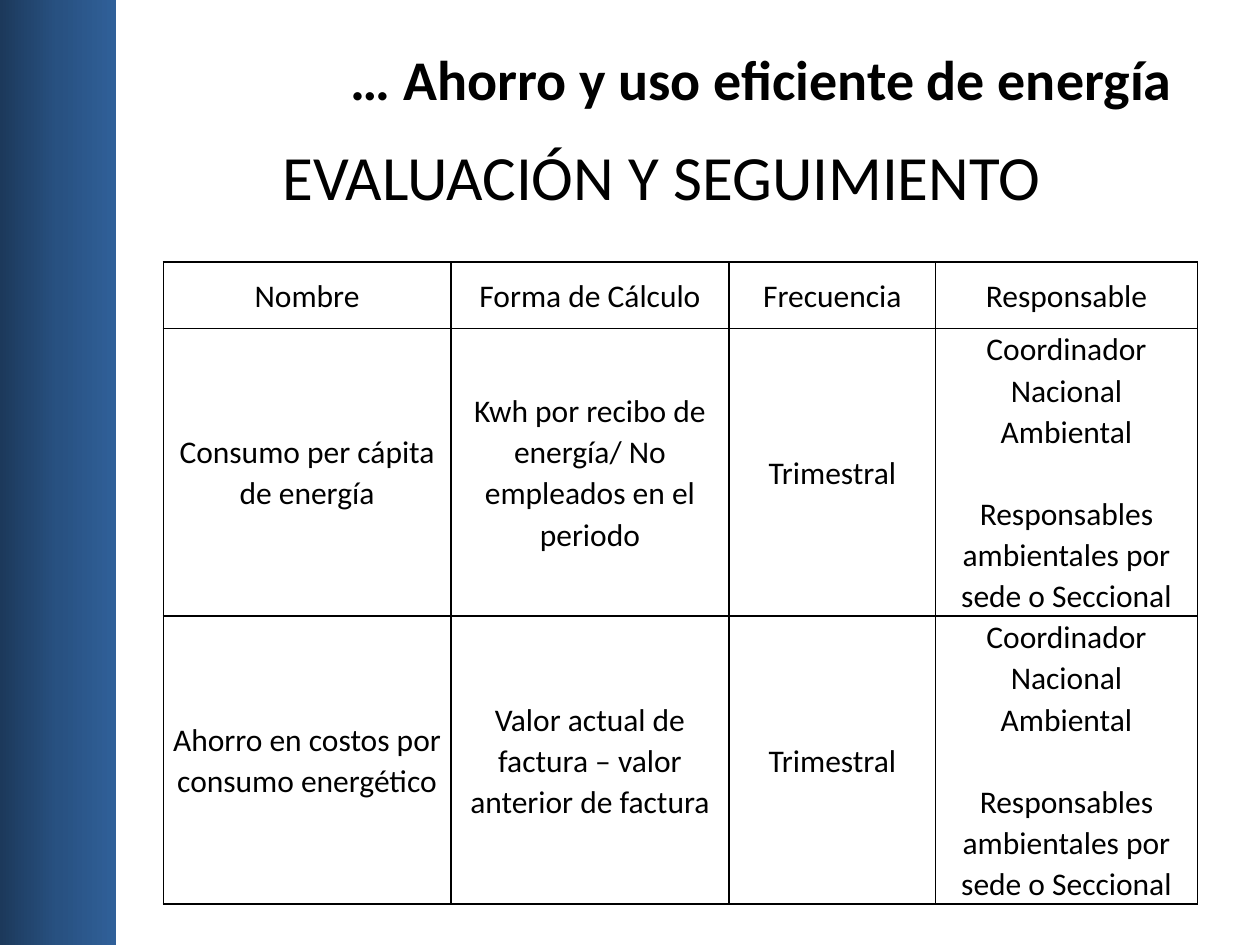
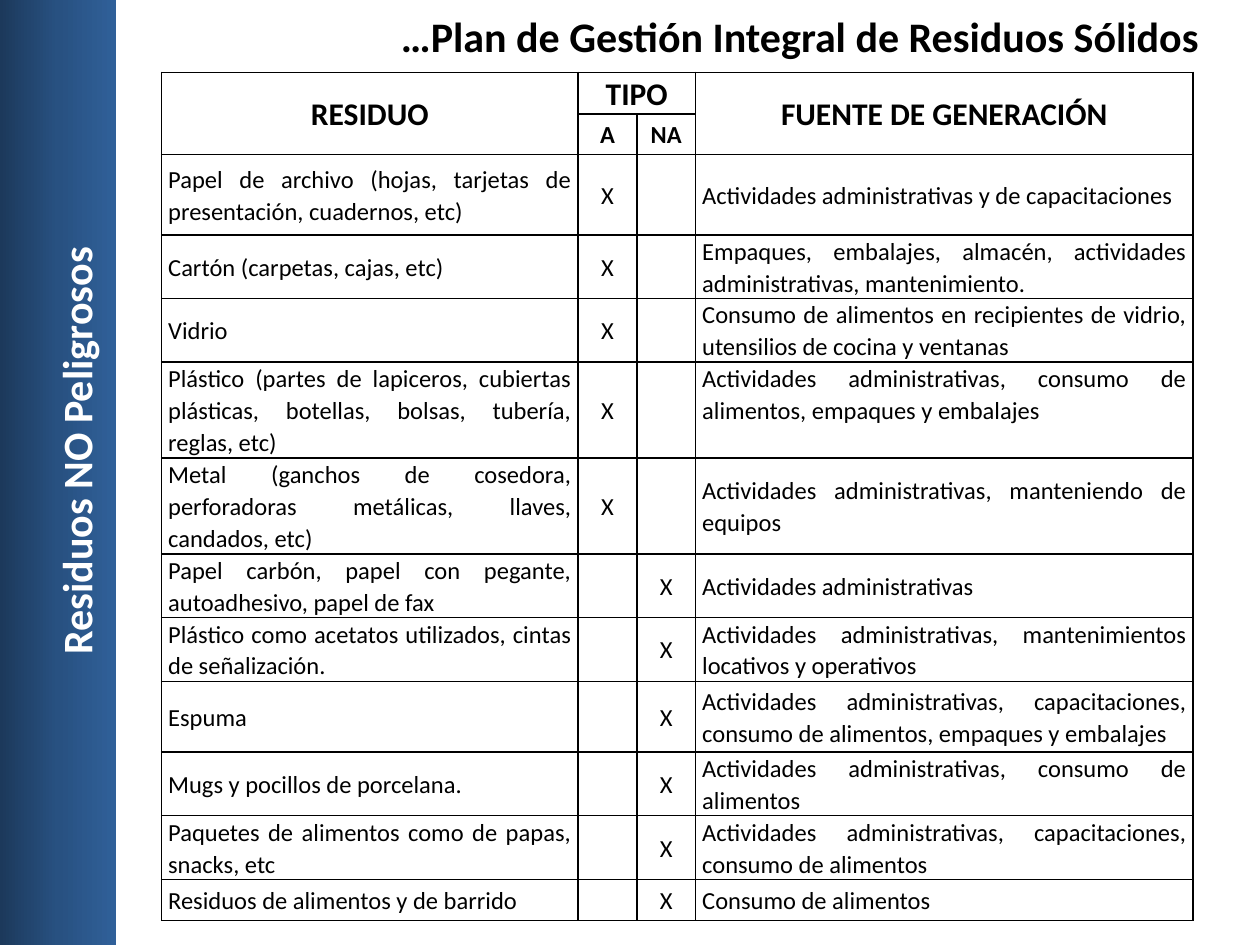
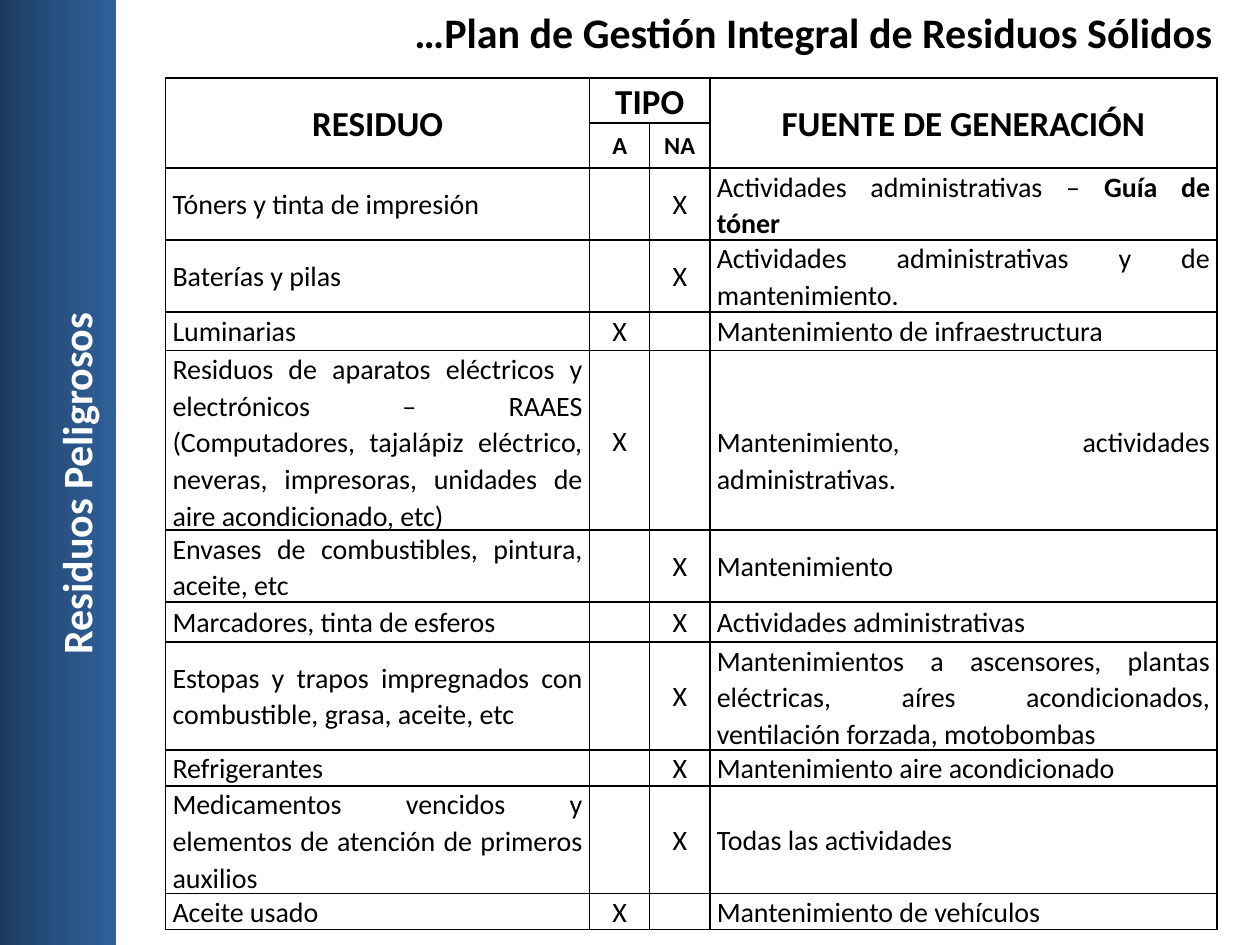
"""Build three slides on energy saving and solid waste management."""
import copy
from typing import NamedTuple, Optional

import lxml.etree
import pptx
import pptx.dml.color
import pptx.enum.shapes
import pptx.enum.text
import pptx.oxml.ns
import pptx.presentation
import pptx.shapes.autoshape
import pptx.slide
import pptx.table
import pptx.text.text
import pptx.util

Pt = pptx.util.Pt
RGBColor = pptx.dml.color.RGBColor
Align = pptx.enum.text.PP_ALIGN
Anchor = pptx.enum.text.MSO_ANCHOR
qn = pptx.oxml.ns.qn

FONT = "Calibri"
BLACK = RGBColor(0x00, 0x00, 0x00)
WHITE = RGBColor(0xFF, 0xFF, 0xFF)
BAND = (
    (0, RGBColor(0x1C, 0x39, 0x5B)),
    (0.5, RGBColor(0x28, 0x51, 0x81)),
    (1, RGBColor(0x30, 0x60, 0x99)),
)
WIDE, HIGH = 720, 540
LEAD = 1.07
PLAN = "…Plan de Gestión Integral de Residuos Sólidos"


class Box(NamedTuple):
    """Place of an element, in points."""

    left: float
    top: float
    width: float
    height: float


class Style(NamedTuple):
    """Look of a run of text."""

    size: float
    bold: bool = False
    color: RGBColor = BLACK


class Waste(NamedTuple):
    """One kind of waste, whether it is usable, and its source."""

    name: str
    usable: bool
    source: str
    height: float
    strong: str = ""
    gap: Optional[float] = None


class Plan(NamedTuple):
    """A slide that lists wastes."""

    title: Box
    side: str
    left: float
    top: float
    cols: tuple[float, ...]
    heads: tuple[float, float]
    pad: float
    head: Style
    body: Style
    wastes: tuple[Waste, ...]


def add_run(para: pptx.text.text._Paragraph, text: str, style: Style) -> None:
    """Add one run in the given style."""
    run = para.add_run()
    run.text = text
    run.font.name = FONT
    run.font.size = Pt(style.size)
    run.font.bold = style.bold
    run.font.color.rgb = style.color


def add_text(
    slide: pptx.slide.Slide, box: Box, text: str, style: Style, align: Align
) -> pptx.shapes.autoshape.Shape:
    """Add a text box that wraps and holds one line."""
    shape = slide.shapes.add_textbox(*map(Pt, box))
    frame = shape.text_frame
    frame.word_wrap = True
    frame.vertical_anchor = Anchor.TOP
    para = frame.paragraphs[0]
    para.alignment = align
    add_run(para, text, style)
    return shape


def add_title(slide: pptx.slide.Slide, box: Box, text: str, size: float) -> None:
    """Add the bold title at the right."""
    shape = add_text(slide, box, text, Style(size, True), Align.RIGHT)
    shape.text_frame.margin_top = Pt(3.6)


def add_side(slide: pptx.slide.Slide, text: str) -> None:
    """Write a label up the side band."""
    box = Box(-136, 255.6, 357, 38)
    shape = add_text(slide, box, text, Style(24, True, WHITE), Align.LEFT)
    shape.rotation = 270
    shape.text_frame.margin_left = Pt(79.2)
    shape.text_frame.paragraphs[0].line_spacing = 1.06


def new_slide(deck: pptx.presentation.Presentation) -> pptx.slide.Slide:
    """Add a blank slide with the shaded band at the left."""
    slide = deck.slides.add_slide(deck.slide_layouts[6])
    kind = pptx.enum.shapes.MSO_SHAPE.RECTANGLE
    band = slide.shapes.add_shape(kind, Pt(0), Pt(0), Pt(66.5), Pt(HIGH))
    band.shadow.inherit = False
    band.line.fill.background()
    band.fill.gradient()
    band.fill.gradient_angle = 0
    stops = next(band._element.iter(qn("a:gsLst")))
    stops.insert(1, copy.deepcopy(stops[0]))
    for stop, (place, color) in zip(band.fill.gradient_stops, BAND):
        stop.position = place
        stop.color.rgb = color
    return slide


def add_edge(cell: pptx.table._Cell) -> None:
    """Draw a thin black line on each side of a cell."""
    props = cell._tc.get_or_add_tcPr()
    for side in ("lnL", "lnR", "lnT", "lnB"):
        line = lxml.etree.SubElement(props, qn(f"a:{side}"), w=str(Pt(1)))
        fill = lxml.etree.SubElement(line, qn("a:solidFill"))
        lxml.etree.SubElement(fill, qn("a:srgbClr"), val=str(BLACK))


def add_grid(
    slide: pptx.slide.Slide,
    left: float,
    top: float,
    cols: tuple[float, ...],
    rows: list[float],
    pad: float,
) -> pptx.table.Table:
    """Add a lined table with empty cells."""
    box = Box(left, top, sum(cols), sum(rows))
    grid = slide.shapes.add_table(len(rows), len(cols), *map(Pt, box)).table
    grid.first_row = grid.horz_banding = False
    for col, width in zip(grid.columns, cols):
        col.width = Pt(width)
    for row, height in zip(grid.rows, rows):
        row.height = Pt(height)
        for cell in row.cells:
            cell.margin_left = cell.margin_right = Pt(pad)
            cell.margin_top = cell.margin_bottom = Pt(0)
            cell.vertical_anchor = Anchor.MIDDLE
            add_edge(cell)
            cell.fill.background()
            para = cell.text_frame.paragraphs[0]._p
            lxml.etree.SubElement(para, qn("a:endParaRPr"), sz="1200")
    return grid


def fill_cell(
    cell: pptx.table._Cell, text: str, style: Style, align: Align = Align.CENTER
) -> pptx.text.text._Paragraph:
    """Write the first paragraph of a cell."""
    para = cell.text_frame.paragraphs[0]
    para.alignment = align
    para.line_spacing = LEAD
    add_run(para, text, style)
    return para


def draw_check(deck: pptx.presentation.Presentation) -> None:
    """Draw the slide on how energy use is checked."""
    slide = new_slide(deck)
    add_text(
        slide, Box(54, 75, 648, 55.5), "EVALUACIÓN Y SEGUIMIENTO", Style(36), Align.CENTER
    )
    add_title(slide, Box(36, 21.6, 641, 90), "… Ahorro y uso eficiente de energía", 32)
    roles = ("Coordinador Nacional Ambiental", "Responsables ambientales por sede o Seccional")
    rows = (
        ("Nombre", "Forma de Cálculo", "Frecuencia", "Responsable"),
        (
            "Consumo per cápita de energía",
            "Kwh por recibo de energía/ No empleados en el periodo",
            "Trimestral",
            roles[0],
        ),
        (
            "Ahorro en costos por consumo energético",
            "Valor actual de factura – valor anterior de factura",
            "Trimestral",
            roles[0],
        ),
    )
    grid = add_grid(
        slide, 93.4, 149.8, (164.2, 159.1, 118, 149.6), [37.8, 164.5, 164.5], 5
    )
    style = Style(18)
    for row, texts in enumerate(rows):
        for col, text in enumerate(texts):
            fill_cell(grid.cell(row, col), text, style)
    for row in (1, 2):
        para = grid.cell(row, 3).text_frame.add_paragraph()
        para.alignment = Align.CENTER
        para.line_spacing = LEAD
        para.space_before = Pt(23.5)
        add_run(para, roles[1], style)


def draw_plan(deck: pptx.presentation.Presentation, plan: Plan) -> None:
    """Draw a slide that lists wastes, their type and source."""
    slide = new_slide(deck)
    add_title(slide, plan.title, PLAN, 24)
    add_side(slide, plan.side)
    rows = [*plan.heads, *(waste.height for waste in plan.wastes)]
    grid = add_grid(slide, plan.left, plan.top, plan.cols, rows, plan.pad)
    for col in (0, 3):
        grid.cell(0, col).merge(grid.cell(1, col))
    grid.cell(0, 1).merge(grid.cell(0, 2))
    for col, text in ((0, "RESIDUO"), (1, "TIPO"), (3, "FUENTE DE GENERACIÓN")):
        fill_cell(grid.cell(0, col), text, plan.head)
    for col, text in ((1, "A"), (2, "NA")):
        fill_cell(grid.cell(1, col), text, Style(14, True))
    for row, waste in enumerate(plan.wastes, 2):
        fill_cell(grid.cell(row, 0), waste.name, plan.body, Align.JUSTIFY)
        fill_cell(grid.cell(row, 1 if waste.usable else 2), "X", plan.body)
        cell = grid.cell(row, 3)
        para = fill_cell(cell, waste.source, plan.body, Align.JUSTIFY)
        if waste.strong:
            add_run(para, waste.strong, plan.body._replace(bold=True))
        if waste.gap is not None:
            cell.vertical_anchor = Anchor.TOP
            cell.margin_top = Pt(waste.gap)


ADMIN = "Actividades administrativas"
SAFE = Plan(
    Box(77, 2.2, 615.3, 44.6), "Residuos NO Peligrosos", 92.3, 41.4,
    (238, 33.7, 33.5, 284.4), (23.7, 23.3), 3.8, Style(18, True), Style(14),
    (
        Waste("Papel de archivo (hojas, tarjetas de presentación, cuadernos, etc)", True,
              f"{ADMIN} y de capacitaciones", 45.8),
        Waste("Cartón (carpetas, cajas, etc)", True,
              "Empaques, embalajes, almacén, actividades administrativas, mantenimiento.", 36.4),
        Waste("Vidrio", True,
              "Consumo de alimentos en recipientes de vidrio, utensilios de cocina y ventanas",
              36.4),
        Waste("Plástico (partes de lapiceros, cubiertas plásticas, botellas, bolsas, tubería, "
              "reglas, etc)", True,
              f"{ADMIN}, consumo de alimentos, empaques y embalajes", 54.8, gap=0),
        Waste("Metal (ganchos de cosedora, perforadoras metálicas, llaves, candados, etc)", True,
              f"{ADMIN}, manteniendo de equipos", 54.8),
        Waste("Papel carbón, papel con pegante, autoadhesivo, papel de fax", False, ADMIN, 36.4),
        Waste("Plástico como acetatos utilizados, cintas de señalización.", False,
              f"{ADMIN}, mantenimientos locativos y operativos", 36.4),
        Waste("Espuma", False,
              f"{ADMIN}, capacitaciones, consumo de alimentos, empaques y embalajes", 40.4),
        Waste("Mugs y pocillos de porcelana.", False, f"{ADMIN}, consumo de alimentos", 36.4),
        Waste("Paquetes de alimentos como de papas, snacks, etc", False,
              f"{ADMIN}, capacitaciones, consumo de alimentos", 36.4),
        Waste("Residuos de alimentos y de barrido", False, "Consumo de alimentos", 23.5),
    ),
)
RISKY = Plan(
    Box(84.2, 0, 615.8, 44.6), "Residuos Peligrosos", 94.6, 44.6,
    (242.4, 34.3, 34.3, 290), (25.7, 25.7), 4, Style(20, True), Style(16),
    (
        Waste("Tóners y tinta de impresión", False, f"{ADMIN} – ", 41, "Guía de tóner"),
        Waste("Baterías y pilas", False, f"{ADMIN} y de mantenimiento.", 41),
        Waste("Luminarias", True, "Mantenimiento de infraestructura", 22.2),
        Waste("Residuos de aparatos eléctricos y electrónicos – RAAES (Computadores, tajalápiz "
              "eléctrico, neveras, impresoras, unidades de aire acondicionado, etc)", True,
              "Mantenimiento, actividades administrativas.", 102.5, gap=41.8),
        Waste("Envases de combustibles, pintura, aceite, etc", False, "Mantenimiento", 41),
        Waste("Marcadores, tinta de esferos", False, ADMIN, 22.8),
        Waste("Estopas y trapos impregnados con combustible, grasa, aceite, etc", False,
              "Mantenimientos a ascensores, plantas eléctricas, aíres acondicionados, "
              "ventilación forzada, motobombas", 61.6),
        Waste("Refrigerantes", False, "Mantenimiento aire acondicionado", 20.6),
        Waste("Medicamentos vencidos y elementos de atención de primeros auxilios", False,
              "Todas las actividades", 61.4),
        Waste("Aceite usado", True, "Mantenimiento de vehículos", 20.6),
    ),
)


def main() -> None:
    """Build the deck and save it."""
    deck = pptx.Presentation()
    deck.slide_width, deck.slide_height = Pt(WIDE), Pt(HIGH)
    draw_check(deck)
    for plan in (SAFE, RISKY):
        draw_plan(deck, plan)
    deck.save("out.pptx")


if __name__ == "__main__":
    main()
